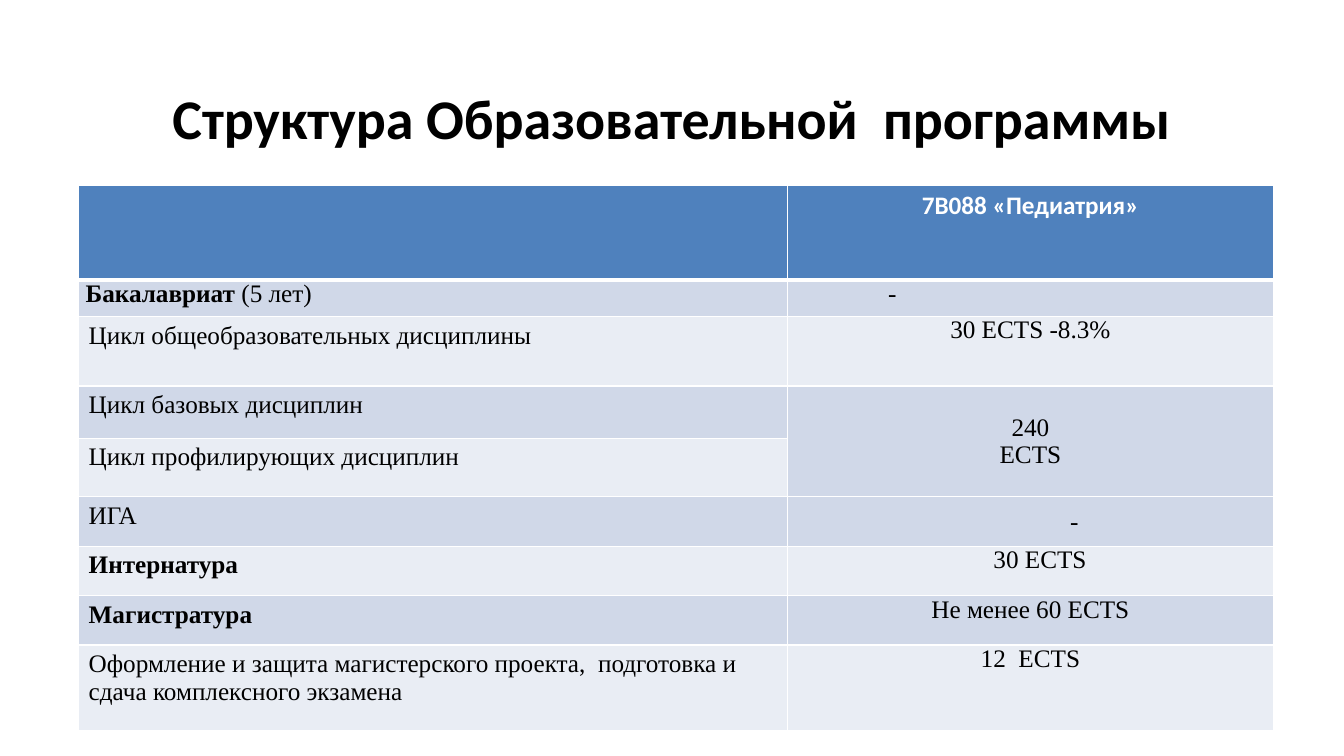
import pptx
import pptx.dml.color
import pptx.enum.text
import pptx.oxml
import pptx.oxml.ns
import pptx.util
from pptx.util import Inches

ALIGN = pptx.enum.text.PP_ALIGN
ANCHOR = pptx.enum.text.MSO_ANCHOR
HEADER_FILL = "4F81BD"
BAND_FILLS = ("D0D8E8", "E9EDF4")
COLUMN_WIDTHS = (7.03, 4.82)
ROW_HEIGHTS = (0.94, 0.36, 0.69, 0.52, 0.58, 0.49, 0.49, 0.49, 0.85)
BOLD_STAGES = ("Интернатура", "Магистратура")
TIGHT_ROW = 1
MERGED_ROWS = (3, 4)
EXAM_ROW = 5
VALUE_INDENTS = {1: 0.93, 5: 0.87, 6: 0.19}
PROGRAM_ROWS = (
    ("", "7В088 «Педиатрия»"),
    ("Бакалавриат", "-"),
    ("Цикл общеобразовательных дисциплины", "30 ECTS -8.3%"),
    ("Цикл базовых дисциплин", "240\nECTS"),
    ("Цикл профилирующих дисциплин", ""),
    ("ИГА", "-"),
    ("Интернатура", "30 ECTS"),
    ("Магистратура", "Не менее 60 ECTS"),
    ("Оформление и защита магистерского проекта,  подготовка и сдача комплексного экзамена", "12  ECTS"),
)


def color(hex_string):
    """Return the colour for a hex string."""
    return pptx.dml.color.RGBColor.from_string(hex_string)


def style_paragraph(paragraph, name, size, hex_string, bold, alignment):
    """Set the font and alignment of a paragraph."""
    paragraph.alignment = alignment
    font = paragraph.font
    font.name = name
    font.size = pptx.util.Pt(size)
    font.bold = bold
    font.color.rgb = color(hex_string)


def add_title(slide, left, top, width, height):
    """Add the centred slide title in the given box."""
    frame = slide.shapes.add_textbox(Inches(left), Inches(top), Inches(width), Inches(height)).text_frame
    frame.word_wrap = True
    frame.vertical_anchor = ANCHOR.MIDDLE
    frame.text = "Структура Образовательной  программы"
    style_paragraph(frame.paragraphs[0], "Calibri", 40, "000000", True, ALIGN.CENTER)


def add_borders(cell, row):
    """Draw white cell borders, thicker under the header row."""
    properties = cell._tc.get_or_add_tcPr()
    for side in "LRTB":
        thick = (row, side) in ((0, "B"), (1, "T"))
        width = pptx.util.Pt(3 if thick else 1)
        properties.append(pptx.oxml.parse_xml(
            f'<a:ln{side} {pptx.oxml.ns.nsdecls("a")} w="{width}">'
            '<a:solidFill><a:srgbClr val="FFFFFF"/></a:solidFill>'
            f'</a:ln{side}>'))


def fill_cell(cell, row, column, text):
    """Write and style one cell of the programme table."""
    header = row == 0
    add_borders(cell, row)
    cell.fill.solid()
    cell.fill.fore_color.rgb = color(HEADER_FILL if header else BAND_FILLS[(row - 1) % 2])
    if row == TIGHT_ROW or (column == 1 and not header):
        cell.margin_left = cell.margin_right = Inches(0.07)
        cell.margin_top = cell.margin_bottom = 0
    if column == 1 and row in (MERGED_ROWS[0], EXAM_ROW):
        cell.vertical_anchor = ANCHOR.MIDDLE
    cell.text = text
    centred = column == 1 and row != TIGHT_ROW
    for paragraph in cell.text_frame.paragraphs:
        style_paragraph(paragraph, "Calibri" if header else "Times New Roman", 18,
                        "FFFFFF" if header else "000000", header or text in BOLD_STAGES,
                        ALIGN.CENTER if centred else ALIGN.LEFT)
        if column == 1 and row in VALUE_INDENTS:
            paragraph._p.get_or_add_pPr().set("marL", str(Inches(VALUE_INDENTS[row])))


def add_program_table(slide, left, top, width, height):
    """Add the programme structure table in the given box."""
    table = slide.shapes.add_table(len(ROW_HEIGHTS), len(COLUMN_WIDTHS), Inches(left), Inches(top),
                                   Inches(width), Inches(height)).table
    for column, column_width in zip(table.columns, COLUMN_WIDTHS):
        column.width = Inches(column_width)
    for row, row_height in zip(table.rows, ROW_HEIGHTS):
        row.height = Inches(row_height)
    for row, texts in enumerate(PROGRAM_ROWS):
        for column, text in enumerate(texts):
            fill_cell(table.cell(row, column), row, column, text)
    first, last = MERGED_ROWS
    table.cell(first, 1).merge(table.cell(last, 1))
    bachelor = table.cell(TIGHT_ROW, 0).text_frame.paragraphs[0]
    bachelor.runs[0].font.bold = True
    duration = bachelor.add_run()
    duration.text = " (5 лет)"
    duration.font.bold = False


def main():
    """Build and save the presentation."""
    presentation = pptx.Presentation()
    presentation.slide_width = Inches(13.33)
    presentation.slide_height = Inches(7.5)
    slide = presentation.slides.add_slide(presentation.slide_layouts[6])
    add_title(slide, 0.63, 0.8, 12.06, 0.72)
    add_program_table(slide, 0.78, 1.84, sum(COLUMN_WIDTHS), sum(ROW_HEIGHTS))
    presentation.save("out.pptx")


if __name__ == "__main__":
    main()
